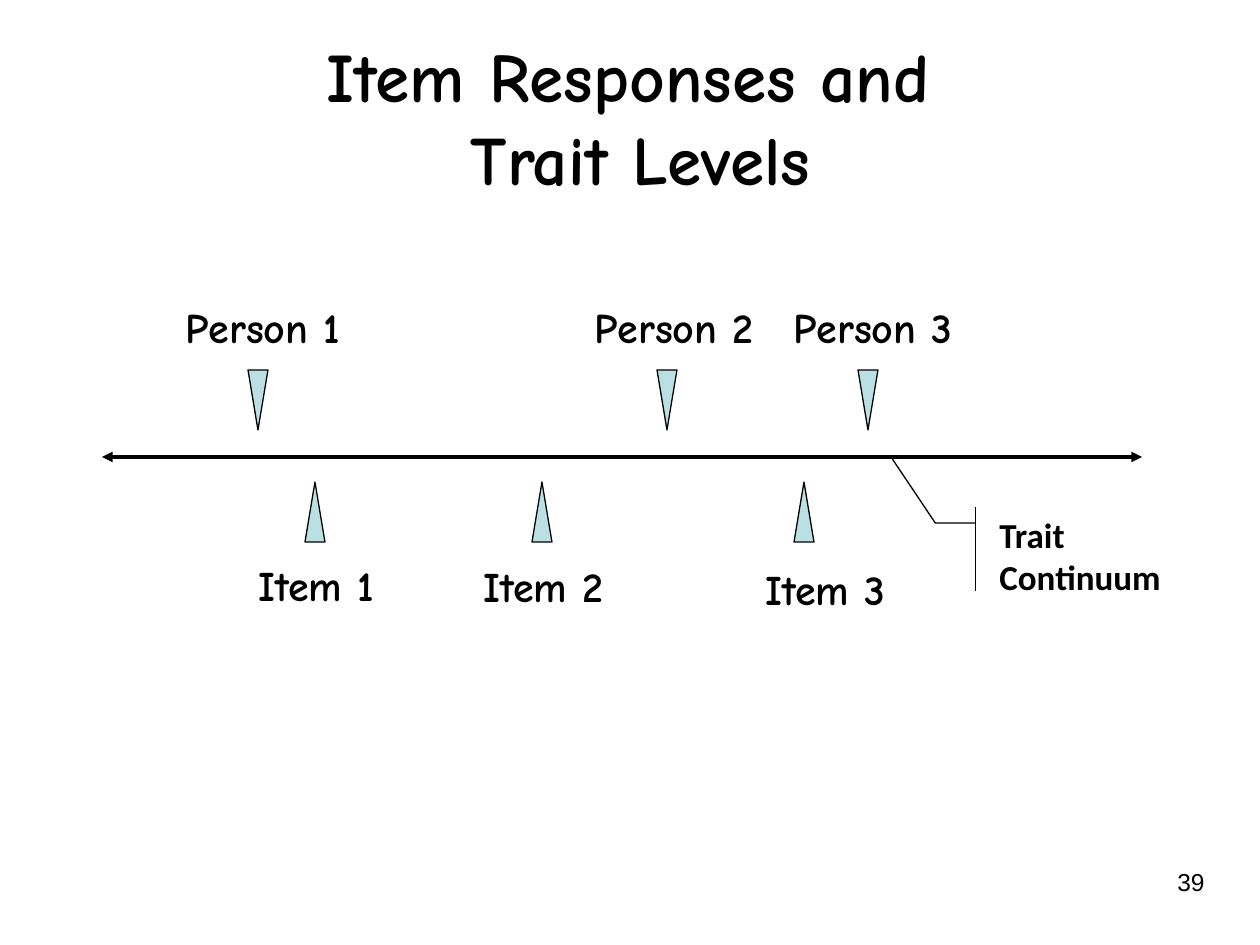
import pptx
import pptx.dml.color
import pptx.enum.shapes
import pptx.enum.text
import pptx.oxml.ns
import pptx.util
from lxml import etree

COLORS = {"ink": "000000", "marker": "BBE0E3"}
HAND, SANS, PLAIN = "Comic Neue", "Calibri", "Arial"
SHAPE = pptx.enum.shapes.MSO_SHAPE
ALIGN = pptx.enum.text.PP_ALIGN
ANCHOR = pptx.enum.text.MSO_ANCHOR

AXIS_LEFT, AXIS_RIGHT, AXIS_Y = 102, 1142, 457
MARKER_W, MARKER_H = 20, 60
PERSON_TOP, ITEM_TOP = 370, 482
# name, marker centre, label left, label top
PERSONS = [("Person 1", 258, 173, 295), ("Person 2", 667, 582, 295), ("Person 3", 868, 781, 295)]
ITEMS = [("Item 1", 315, 246, 553), ("Item 2", 542, 471, 554), ("Item 3", 804, 753, 557)]
CALLOUT_BENDS = [0.19, -0.05, 0.19, -0.23, -0.57, -0.42]


def px(n):
    """Turn pixels into EMU."""
    return pptx.util.Emu(round(n * 914400 / 126))


def rgb(name):
    """Look up a named colour."""
    return pptx.dml.color.RGBColor.from_string(COLORS[name])


def add_run(p, text, font, size, bold=True):
    """Append one formatted run to a paragraph."""
    r = p.add_run()
    r.text = text
    r.font.name, r.font.size, r.font.bold = font, pptx.util.Pt(size), bold
    r.font.color.rgb = rgb("ink")


def set_line(s, width):
    """Give a shape or connector a plain outline."""
    s.line.color.rgb = rgb("ink")
    s.line.width = pptx.util.Pt(width)


def add_title(slide, lines):
    """Place the title and break it into lines."""
    s = slide.shapes.title
    s.left, s.top, s.width, s.height = px(21), px(38), px(1239), px(157)
    tf = s.text_frame
    tf.auto_size = pptx.enum.text.MSO_AUTO_SIZE.NONE
    tf.vertical_anchor = ANCHOR.MIDDLE
    p = tf.paragraphs[0]
    p.alignment = ALIGN.CENTER
    for i, line in enumerate(lines):
        if i:
            p.add_line_break()
        add_run(p, line, HAND, 39.6)


def add_text(shapes, text, x, y, w, h, font, size, bold=True, align=ALIGN.LEFT):
    """Add a one-line text box."""
    tf = shapes.add_textbox(px(x), px(y), px(w), px(h)).text_frame
    tf.word_wrap = True
    p = tf.paragraphs[0]
    p.alignment = align
    add_run(p, text, font, size, bold)


def add_axis(shapes):
    """Draw the trait line with an arrowhead at both ends."""
    s = shapes.add_connector(pptx.enum.shapes.MSO_CONNECTOR.STRAIGHT,
                             px(AXIS_LEFT), px(AXIS_Y), px(AXIS_RIGHT), px(AXIS_Y))
    set_line(s, 2)
    ln = s.line._get_or_add_ln()
    for end in ("a:headEnd", "a:tailEnd"):
        etree.SubElement(ln, pptx.oxml.ns.qn(end), type="triangle")
    etree.SubElement(s._element.spPr, pptx.oxml.ns.qn("a:effectLst"))


def add_marker(shapes, center, top, down):
    """Add a triangle that points at the axis."""
    s = shapes.add_shape(SHAPE.ISOSCELES_TRIANGLE, px(center - MARKER_W / 2), px(top),
                         px(MARKER_W), px(MARKER_H))
    s.shadow.inherit = False
    s.fill.solid()
    s.fill.fore_color.rgb = rgb("marker")
    set_line(s, 0.75)
    if down:
        s._element.spPr.get_or_add_xfrm().set("flipV", "1")


def add_callout(shapes, lines):
    """Add the bent callout that names the axis."""
    s = shapes.add_shape(SHAPE.LINE_CALLOUT_2_ACCENT_BAR, px(987), px(507), px(225), px(84))
    s.shadow.inherit = False
    s.fill.background()
    set_line(s, 0.75)
    for i, bend in enumerate(CALLOUT_BENDS):
        s.adjustments[i] = bend
    tf = s.text_frame
    tf.word_wrap = True
    tf.vertical_anchor = ANCHOR.TOP
    for i, line in enumerate(lines):
        p = tf.add_paragraph() if i else tf.paragraphs[0]
        p.alignment = ALIGN.LEFT
        add_run(p, line, SANS, 20)


def main():
    """Build and save the slide."""
    prs = pptx.Presentation()
    prs.slide_width, prs.slide_height = px(1260), px(945)
    slide = prs.slides.add_slide(prs.slide_layouts[5])
    add_title(slide, ["Item Responses and ", "Trait Levels"])
    diagram = slide.shapes.add_group_shape().shapes
    add_axis(diagram)
    for marks, top, width in ((PERSONS, PERSON_TOP, 202), (ITEMS, ITEM_TOP, 169)):
        for name, center, left, label_top in marks:
            add_marker(diagram, center, top, down=marks is PERSONS)
            add_text(diagram, name, left, label_top, width, 64, HAND, 24)
    add_callout(diagram, ["Trait", "Continuum"])
    add_text(slide.shapes, "39", 1015, 861, 202, 66, PLAIN, 14, False, ALIGN.RIGHT)
    prs.save("out.pptx")


if __name__ == "__main__":
    main()
